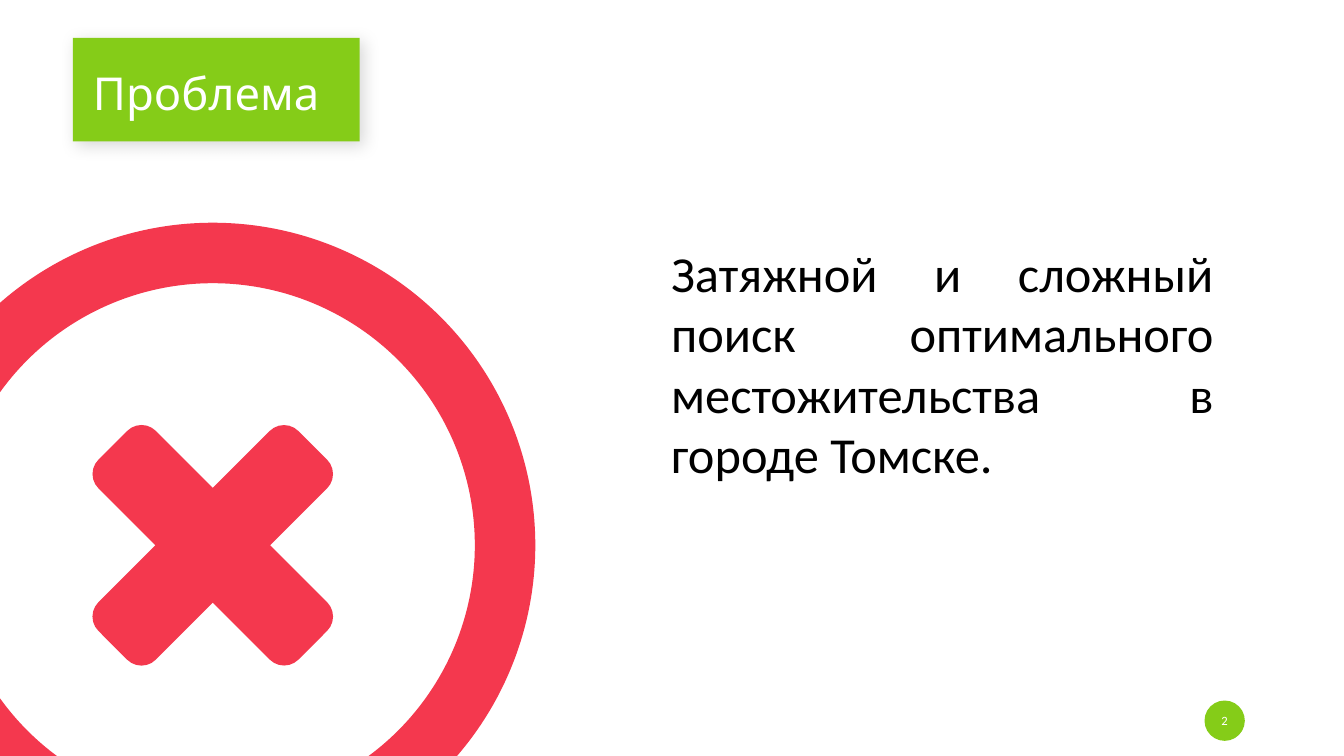
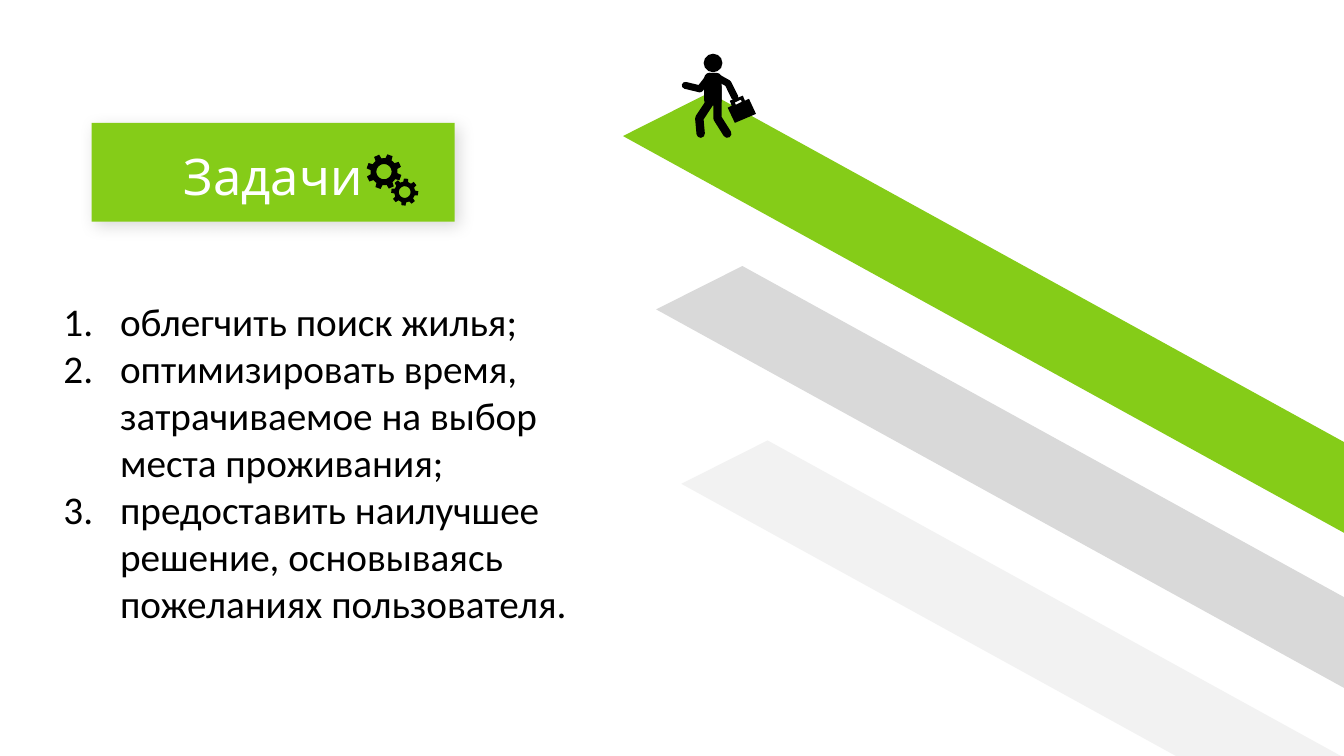
from math import cos, pi, sin

from pptx import Presentation
from pptx.dml.color import RGBColor
from pptx.enum import shapes, text
from pptx.oxml import parse_xml
from pptx.oxml.ns import nsdecls
from pptx.util import Pt

GREEN = RGBColor(0x85, 0xCC, 0x18)
RED = RGBColor(0xF4, 0x38, 0x4E)
GRAY = RGBColor(0xD9, 0xD9, 0xD9)
PALE = RGBColor(0xF2, 0xF2, 0xF2)
BLACK = RGBColor(0, 0, 0)
WHITE = RGBColor(255, 255, 255)
TITLE_FONT, BODY_FONT = "Quicksand", "Calibri"
SHAPE = shapes.MSO_SHAPE
ALIGN = text.PP_ALIGN
ANCHOR = text.MSO_ANCHOR

PROBLEM = "Затяжной и сложный поиск оптимального местожительства в городе Томске."
TASKS = [
    "облегчить поиск жилья;",
    "оптимизировать время, затрачиваемое на выбор места проживания;",
    "предоставить наилучшее решение, основываясь пожеланиях пользователя.",
]

CROSS_CENTER = (152, 389.5)
RING_RADIUS, RING_WIDTH = 230.4, 43.2
ARM_LENGTH, ARM_WIDTH = 202, 58

STRIPE = [(0, 31), (544.3, 330.5), (600.5, 296.6), (61.6, 0)]
STRIPES = [(445, 66.2, GREEN), (468.7, 190, GRAY), (486.7, 314.6, PALE)]

LIMBS = [
    (6, [(506.5, 74), (499.5, 84.5), (500.5, 95.5)]),
    (6, [(512.5, 62), (512.5, 84.5), (519.5, 95.5)]),
    (5, [(507, 54.5), (500, 63.5), (489.5, 61)]),
    (5, [(511, 54.5), (520, 59.5), (525, 69.5)]),
]
CASE = [(519.8, 77), (522.7, 75.6), (521.3, 72), (530.6, 68.4),
        (532.1, 72), (535, 70.6), (540, 81.4), (524.9, 87.8)]
HANDLE_GAP = [(525.6, 74.9), (529.9, 72.7), (529.2, 71.2), (524.9, 73.2)]
GEARS = [(274.3, 122.6, 12.6, 0.35), (289.1, 137.2, 9.7, 0.1)]


def fill_shape(sp, color):
    sp.shadow.inherit = False
    sp.fill.solid()
    sp.fill.fore_color.rgb = color
    sp.line.fill.background()
    return sp


def add_preset(s, kind, box, color):
    return fill_shape(s.shapes.add_shape(kind, *map(Pt, box)), color)


def add_outline(s, contours, color, closed=True):
    points = [[(Pt(x), Pt(y)) for x, y in contour] for contour in contours]
    fb = s.shapes.build_freeform(*points[0][0])
    for i, contour in enumerate(points):
        if i:
            fb.move_to(*contour[0])
        fb.add_line_segments(contour[1:], close=closed)
    return fill_shape(fb.convert_to_shape(), color)


def add_run(p, content, font, size, color):
    r = p.add_run()
    r.text = content
    r.font.name = font
    r.font.size = Pt(size)
    r.font.color.rgb = color


def set_frame(tf, anchor, margins):
    tf.word_wrap = True
    tf.auto_size = text.MSO_AUTO_SIZE.NONE
    tf.vertical_anchor = anchor
    tf.margin_left, tf.margin_top, tf.margin_right, tf.margin_bottom = map(Pt, margins)


def add_title_slide(prs, title, box, size, align):
    s = prs.slides.add_slide(prs.slide_layouts[5])
    sp = s.shapes.title
    sp.left, sp.top, sp.width, sp.height = map(Pt, box)
    fill_shape(sp, GREEN)
    effects = sp._element.spPr.find("{*}effectLst")
    effects.append(parse_xml(
        f'<a:outerShdw {nsdecls("a")} blurRad="{Pt(12)}" dist="{Pt(4)}" dir="2700000">'
        '<a:srgbClr val="000000"><a:alpha val="14000"/></a:srgbClr></a:outerShdw>'))
    set_frame(sp.text_frame, ANCHOR.MIDDLE, (14.4, 3.6, 14.4, 0))
    p = sp.text_frame.paragraphs[0]
    p.alignment = align
    add_run(p, title, TITLE_FONT, size, WHITE)
    return s


def add_body(s, box):
    tf = s.shapes.add_textbox(*map(Pt, box)).text_frame
    set_frame(tf, ANCHOR.TOP, (7.2, 3.6, 7.2, 3.6))
    return tf


def add_badge(s, number):
    sp = add_preset(s, SHAPE.FLOWCHART_CONNECTOR, (860.4, 500.4, 28.8, 28.8), GREEN)
    set_frame(sp.text_frame, ANCHOR.MIDDLE, (0, 3.6, 0, 3.6))
    p = sp.text_frame.paragraphs[0]
    p.alignment = ALIGN.CENTER
    add_run(p, number, BODY_FONT, 9, WHITE)


def add_cross(s):
    cx, cy = CROSS_CENTER
    d = 2 * RING_RADIUS
    ring = add_preset(s, SHAPE.DONUT, (cx - d / 2, cy - d / 2, d, d), RED)
    ring.adjustments[0] = RING_WIDTH / d
    for angle in (45, -45):
        box = (cx - ARM_LENGTH / 2, cy - ARM_WIDTH / 2, ARM_LENGTH, ARM_WIDTH)
        arm = add_preset(s, SHAPE.ROUNDED_RECTANGLE, box, RED)
        arm.adjustments[0] = 0.25
        arm.rotation = angle


def circle(cx, cy, radius, steps=32):
    angles = [2 * pi * i / steps for i in range(steps)]
    return [(cx + radius * cos(a), cy + radius * sin(a)) for a in angles]


def add_gear(s, cx, cy, radius, turn, teeth=8):
    root = 0.77 * radius
    profile = [(-0.3, root), (-0.2, radius), (0.2, radius), (0.3, root)]
    rim = []
    for tooth in range(teeth):
        for offset, r in profile:
            a = turn + 2 * pi * (tooth + offset) / teeth
            rim.append((cx + r * cos(a), cy + r * sin(a)))
    add_outline(s, [rim, circle(cx, cy, 0.43 * radius)], BLACK)


def add_walker(s):
    add_preset(s, SHAPE.OVAL, (502.6, 38.4, 13.4, 13.2), BLACK)
    torso = add_preset(s, SHAPE.ROUNDED_RECTANGLE, (503, 52, 12.5, 23.5), BLACK)
    torso.adjustments[0] = 0.3
    for width, points in LIMBS:
        sp = add_outline(s, [points], BLACK, closed=False)
        sp.fill.background()
        sp.line.color.rgb = BLACK
        sp.line.width = Pt(width)
        ln = sp.line._get_or_add_ln()
        ln.set("cap", "rnd")
        ln.append(parse_xml(f'<a:round {nsdecls("a")}/>'))
    add_outline(s, [CASE, HANDLE_GAP], BLACK)


def build_problem(prs):
    s = add_title_slide(prs, "Проблема", (52, 27, 205, 74), 32.4, ALIGN.LEFT)
    add_badge(s, "2")
    add_cross(s)
    p = add_body(s, (472.3, 169.2, 401.8, 181.4)).paragraphs[0]
    p.alignment = ALIGN.JUSTIFY
    p.space_after = Pt(12)
    add_run(p, PROBLEM, BODY_FONT, 36, BLACK)


def build_tasks(prs):
    s = add_title_slide(prs, "Задачи", (65.5, 87.8, 259.2, 70.6), 36, ALIGN.CENTER)
    for left, top, color in STRIPES:
        add_outline(s, [[(left + x, top + y) for x, y in STRIPE]], color)
    add_walker(s)
    for gear in GEARS:
        add_gear(s, *gear)
    tf = add_body(s, (38.2, 208.8, 389.5, 244.8))
    for i, task in enumerate(TASKS):
        p = tf.add_paragraph() if i else tf.paragraphs[0]
        pPr = p._p.get_or_add_pPr()
        pPr.set("marL", str(Pt(40.5)))
        pPr.set("indent", str(-Pt(40.5)))
        pPr.append(parse_xml(f'<a:buFont {nsdecls("a")} typeface="{BODY_FONT}"/>'))
        pPr.append(parse_xml(f'<a:buAutoNum {nsdecls("a")} type="arabicPeriod"/>'))
        add_run(p, task, BODY_FONT, 28, BLACK)


def main():
    prs = Presentation()
    prs.slide_width, prs.slide_height = Pt(960), Pt(540)
    build_problem(prs)
    build_tasks(prs)
    prs.save("out.pptx")


if __name__ == "__main__":
    main()
